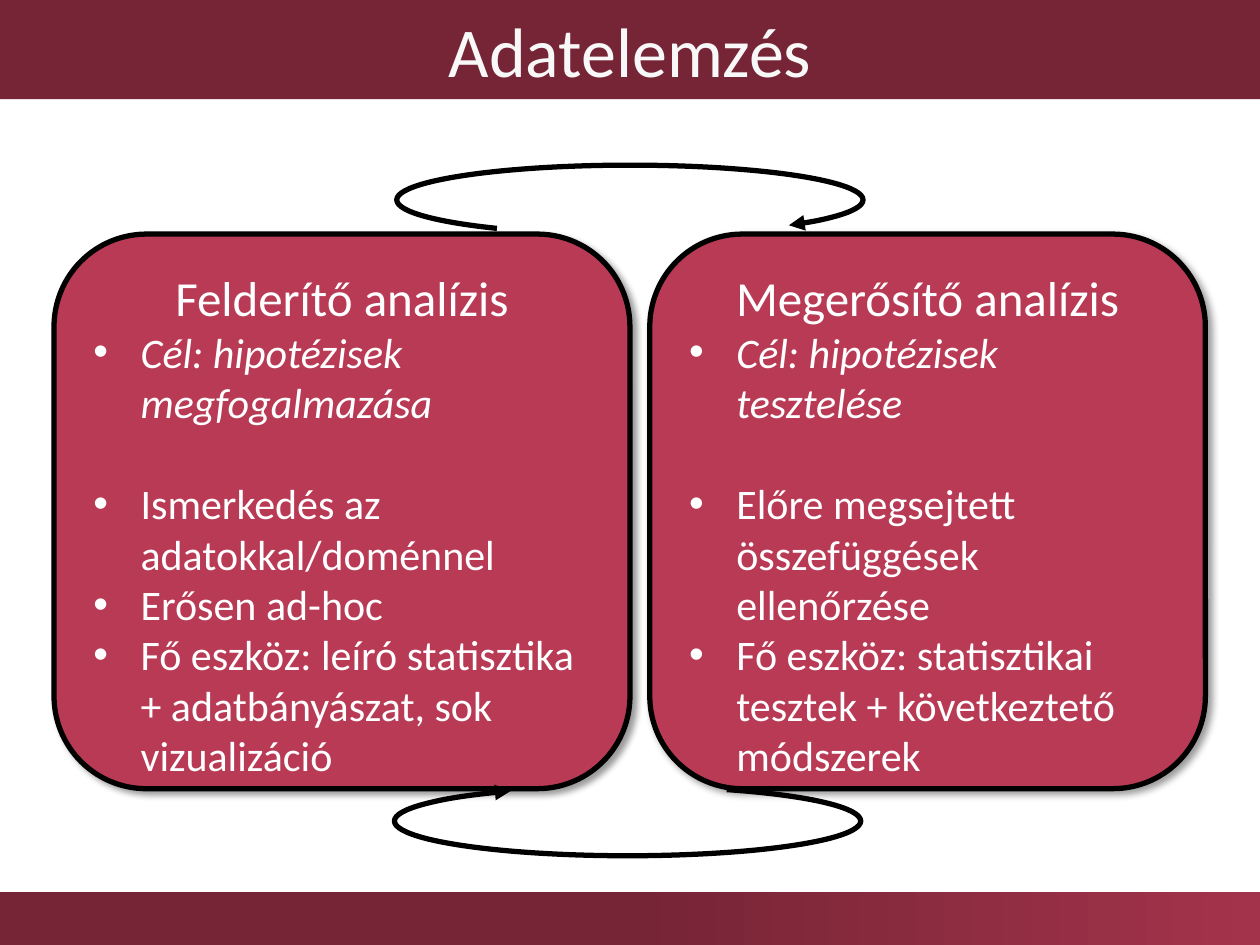
from lxml.etree import SubElement
from pptx import Presentation
from pptx.dml.color import RGBColor
from pptx.enum.shapes import MSO_SHAPE
from pptx.enum.text import MSO_ANCHOR, MSO_AUTO_SIZE, PP_ALIGN
from pptx.oxml.ns import qn
from pptx.util import Cm, Pt

COLORS = {
    "band": "762536",
    "band_end": "A3334B",
    "panel": "B83A55",
    "outline": "000000",
    "title": "F8F8F8",
    "text": "FFFFFF",
}
FONT = "Calibri"
WIDTH, HEIGHT = 25.4, 19.05
TITLE_HEIGHT, FOOTER_HEIGHT = 2.0, 1.07
PANEL_TOP, PANEL_HEIGHT = 4.72, 11.18
ARC_WIDTH, ARC_HEIGHT = 9.4, 1.4
INDENT = 0.95

TITLE = "Adatelemzés"
PANELS = [
    {
        "left": 1.09,
        "width": 11.61,
        "heading": "Felderítő analízis",
        "goal": "Cél: hipotézisek megfogalmazása",
        "points": [
            "Ismerkedés az adatokkal/doménnel",
            "Erősen ad-hoc",
            "Fő eszköz: leíró statisztika + adatbányászat, sok vizualizáció",
        ],
    },
    {
        "left": 13.1,
        "width": 11.2,
        "heading": "Megerősítő analízis",
        "goal": "Cél: hipotézisek tesztelése",
        "points": [
            "Előre megsejtett összefüggések ellenőrzése",
            "Fő eszköz: statisztikai tesztek + következtető módszerek",
        ],
    },
]
ARCS = [
    {"left": 8.0, "top": 3.33, "rotation": 0, "angles": (167.89, 9.07)},
    {"left": 7.95, "top": 15.85, "rotation": 180, "angles": (162.41, 14.42)},
]


def color(name):
    return RGBColor.from_string(COLORS[name])


def style_text(para, size, color_name="text", italic=False):
    para.font.name = FONT
    para.font.size = Pt(size)
    para.font.italic = italic
    para.font.color.rgb = color(color_name)


def outline(shape):
    shape.line.color.rgb = color("outline")
    shape.line.width = Pt(3)


def add_footer(page):
    footer = page.shapes.add_shape(
        MSO_SHAPE.RECTANGLE, 0, Cm(HEIGHT - FOOTER_HEIGHT), Cm(WIDTH), Cm(FOOTER_HEIGHT)
    )
    footer.shadow.inherit = False
    footer.line.fill.background()
    footer.fill.gradient()
    footer.fill.gradient_angle = 0
    stops = [(0.5, "band"), (1, "band_end")]
    for stop, (position, name) in zip(footer.fill.gradient_stops, stops):
        stop.position = position
        stop.color.rgb = color(name)


def add_title(page):
    title = page.shapes.title
    title.left, title.top, title.width, title.height = 0, 0, Cm(WIDTH), Cm(TITLE_HEIGHT)
    title.fill.solid()
    title.fill.fore_color.rgb = color("band")
    frame = title.text_frame
    frame.text = TITLE
    frame.auto_size = MSO_AUTO_SIZE.NONE
    frame.vertical_anchor = MSO_ANCHOR.MIDDLE
    para = frame.paragraphs[0]
    para.alignment = PP_ALIGN.CENTER
    style_text(para, 40, "title")


def add_shadow(shape):
    shape.shadow.inherit = False
    effects = shape._element.spPr.find(qn("a:effectLst"))
    shadow = SubElement(
        effects, qn("a:outerShdw"), blurRad=str(Pt(4)), dist=str(Pt(3)), dir=str(45 * 60000)
    )
    tint = SubElement(shadow, qn("a:srgbClr"), val=COLORS["outline"])
    SubElement(tint, qn("a:alpha"), val="40000")


def add_bullet(frame, text, italic=False, gap=0):
    para = frame.add_paragraph()
    para.text = text
    para.alignment = PP_ALIGN.LEFT
    para.space_before = Pt(gap)
    properties = para._p.get_or_add_pPr()
    properties.set("marL", str(Cm(INDENT)))
    properties.set("indent", str(-Cm(INDENT)))
    SubElement(properties, qn("a:buFont"), typeface="Arial")
    SubElement(properties, qn("a:buChar"), char="•")
    style_text(para, 24, italic=italic)


def add_panel(page, panel):
    box = page.shapes.add_shape(
        MSO_SHAPE.ROUNDED_RECTANGLE,
        Cm(panel["left"]), Cm(PANEL_TOP), Cm(panel["width"]), Cm(PANEL_HEIGHT),
    )
    box.fill.solid()
    box.fill.fore_color.rgb = color("panel")
    outline(box)
    add_shadow(box)
    frame = box.text_frame
    frame.word_wrap = True
    frame.vertical_anchor = MSO_ANCHOR.TOP
    heading = frame.paragraphs[0]
    heading.text = panel["heading"]
    heading.alignment = PP_ALIGN.CENTER
    style_text(heading, 28)
    add_bullet(frame, panel["goal"], italic=True)
    for index, point in enumerate(panel["points"]):
        add_bullet(frame, point, gap=0 if index else 29)


def add_arc(page, arc):
    shape = page.shapes.add_shape(
        MSO_SHAPE.ARC, Cm(arc["left"]), Cm(arc["top"]), Cm(ARC_WIDTH), Cm(ARC_HEIGHT)
    )
    shape.rotation = arc["rotation"]
    for index, angle in enumerate(arc["angles"]):
        shape.adjustments[index] = angle * 0.6
    shape.shadow.inherit = False
    shape.fill.background()
    outline(shape)
    SubElement(shape.line._get_or_add_ln(), qn("a:tailEnd"), type="triangle")


def main():
    deck = Presentation()
    deck.slide_width, deck.slide_height = Cm(WIDTH), Cm(HEIGHT)
    page = deck.slides.add_slide(deck.slide_layouts[5])
    add_footer(page)
    add_title(page)
    for panel in PANELS:
        add_panel(page, panel)
    for arc in ARCS:
        add_arc(page, arc)
    deck.save("out.pptx")


if __name__ == "__main__":
    main()
